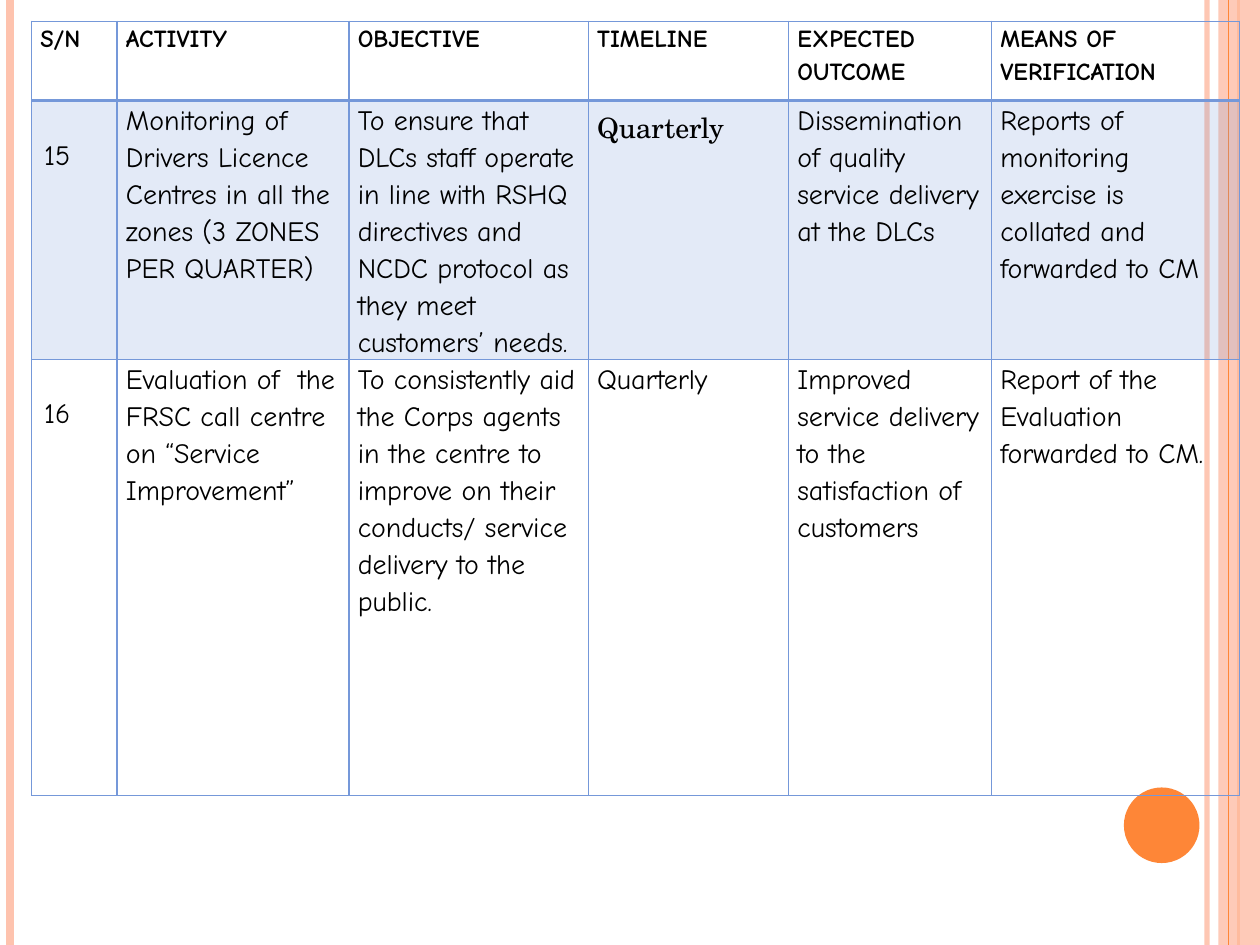
from lxml import etree
from pptx import Presentation
from pptx.dml.color import RGBColor
from pptx.enum.shapes import MSO_CONNECTOR, MSO_SHAPE
from pptx.oxml.ns import qn
from pptx.util import Inches, Pt

LINE = MSO_CONNECTOR.STRAIGHT
RECT, OVAL = MSO_SHAPE.RECTANGLE, MSO_SHAPE.OVAL
PEACH, ORANGE, BLUE, BLACK = "FEC3AE", "FE8637", "7598D9", "000000"
WIDE, HIGH = 10, 7.5

COLS = [0.68, 1.84, 1.9, 1.59, 1.61, 1.97]
ROWS = [0.63, 2.05, 3.46]
HEAD = {"size": Pt(14), "bold": True, "name": "Comic Neue"}
BODY = {"size": Pt(16), "bold": False, "name": "Comic Neue"}
SERIF = {**BODY, "name": "TeX Gyre Schola"}
TEXT_PAD = {"margin_left": 0.07, "margin_right": 0.07, "margin_top": 0, "margin_bottom": 0}
NUM_PAD = {"margin_left": 0.1, "margin_right": 0.1, "margin_top": 0.31, "margin_bottom": 0.05}

CELLS = [
    ["S/N", "ACTIVITY", "OBJECTIVE", "TIMELINE", "EXPECTED OUTCOME", "MEANS OF VERIFICATION"],
    ["15",
     "Monitoring of Drivers Licence Centres in all the zones (3 ZONES PER QUARTER)",
     "To ensure that DLCs staff operate in line with RSHQ directives and NCDC protocol "
     "as they meet customers’ needs.",
     "Quarterly",
     "Dissemination of quality service delivery at the DLCs",
     "Reports of monitoring exercise is  collated and forwarded to CM"],
    ["16",
     "Evaluation of  the FRSC call centre on “Service Improvement”",
     "To consistently aid the Corps agents in the centre to improve on their conducts/ "
     "service delivery to the public.",
     "Quarterly",
     "Improved service delivery to the satisfaction of customers",
     "Report of the Evaluation forwarded to CM."],
]


def paint(form, color, alpha=100):
    """Give a fill a solid colour, with alpha in percent."""
    form.solid()
    form.fore_color.rgb = RGBColor.from_string(color)
    if alpha < 100:
        tone = form._xPr.find(".//" + qn("a:srgbClr"))
        etree.SubElement(tone, qn("a:alpha"), val=str(alpha * 1000))


def add_stripe(slide, x, color, width, alpha=100):
    line = slide.shapes.add_connector(LINE, Inches(x), 0, Inches(x), Inches(HIGH))
    line.line.width = Pt(width)
    paint(line.line.fill, color, alpha)
    etree.SubElement(line._element.spPr, qn("a:effectLst"))


def add_solid(slide, kind, box, color, alpha=100):
    shape = slide.shapes.add_shape(kind, *map(Inches, box))
    shape.shadow.inherit = False
    shape.line.fill.background()
    paint(shape.fill, color, alpha)


def add_frame(slide, left, right):
    """Draw the stripes at both edges and the disc."""
    add_stripe(slide, right - 0.42, PEACH, 3, 93)
    add_stripe(slide, left + 0.08, PEACH, 4.5)
    add_stripe(slide, right - 0.17, ORANGE, 1.5)
    add_solid(slide, RECT, (right - 0.33, 0, 0.33, HIGH), PEACH, 87)
    add_stripe(slide, right - 0.25, ORANGE, 0.75)
    add_solid(slide, OVAL, (right - 1.08, 6.25, 0.6, 0.6), ORANGE)


def add_edges(cell, widths):
    props = cell._tc.get_or_add_tcPr()
    for spot, (side, width) in enumerate(widths.items()):
        edge = etree.Element(qn("a:ln" + side), w=str(Pt(width)))
        fill = etree.SubElement(edge, qn("a:solidFill"))
        etree.SubElement(fill, qn("a:srgbClr"), val=BLUE)
        props.insert(spot, edge)


def write(cell, text, font, pad, gap):
    for name, size in pad.items():
        setattr(cell, name, Inches(size))
    para = cell.text_frame.paragraphs[0]
    para.line_spacing = gap
    run = para.add_run()
    run.text = text
    for name, value in font.items():
        setattr(run.font, name, value)
    run.font.color.rgb = RGBColor.from_string(BLACK)


def add_plan(slide, left, top):
    """Place the activity table with its top left corner at the given point."""
    box = map(Inches, (left, top, sum(COLS), sum(ROWS)))
    table = slide.shapes.add_table(len(ROWS), len(COLS), *box).table
    table.first_row = table.horz_banding = False
    for col, width in zip(table.columns, COLS):
        col.width = Inches(width)
    for r, (row, height) in enumerate(zip(table.rows, ROWS)):
        row.height = Inches(height)
        for c, cell in enumerate(row.cells):
            number = r > 0 and c == 0
            font = HEAD if r == 0 else SERIF if (r, c) == (1, 3) else BODY
            write(cell, CELLS[r][c], font, NUM_PAD if number else TEXT_PAD,
                  1.0 if number else 1.15)
            if r == 1:
                paint(cell.fill, BLUE, 20)
            else:
                cell.fill.background()
            add_edges(cell, {"L": 1, "R": 1, "T": 2 if r == 1 else 1, "B": 2 if r == 0 else 1})


def main():
    deck = Presentation()
    deck.slide_width, deck.slide_height = Inches(WIDE), Inches(HIGH)
    slide = deck.slides.add_slide(deck.slide_layouts[6])
    add_frame(slide, 0, WIDE)
    add_plan(slide, 0.25, 0.17)
    deck.save("out.pptx")


if __name__ == "__main__":
    main()
